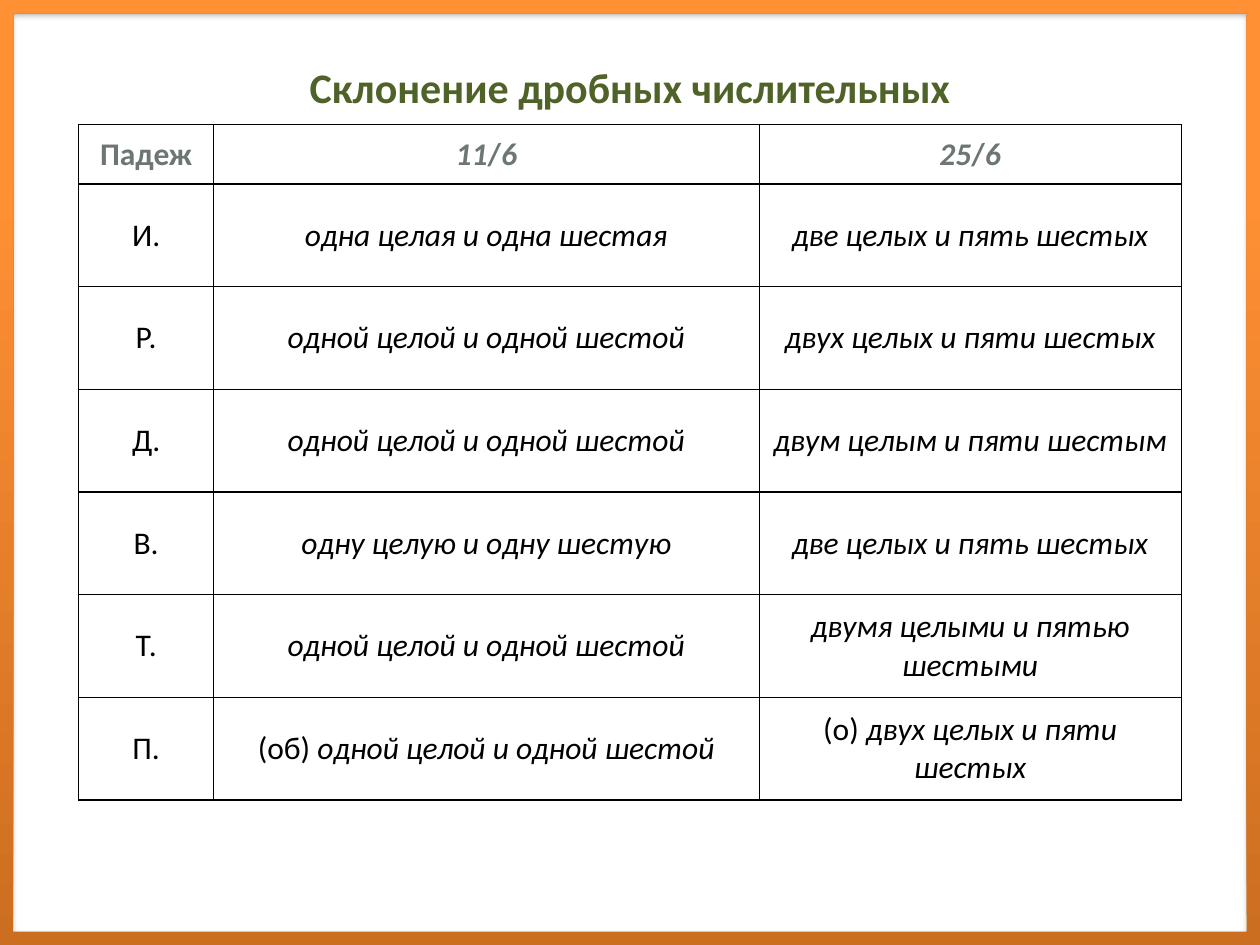
from lxml.etree import SubElement
from pptx import Presentation
from pptx.dml.color import RGBColor
from pptx.enum.shapes import MSO_SHAPE
from pptx.enum.text import MSO_ANCHOR, PP_ALIGN
from pptx.oxml import parse_xml
from pptx.oxml.ns import nsdecls, qn
from pptx.util import Inches, Pt

# Content: each cell is a tuple of text parts
TITLE = "Склонение дробных числительных"
ROWS = [
    [("Падеж",), ("11", "/", "6"), ("25", "/", "6")],
    [("И.",), ("одна целая и одна шестая",), ("две целых и пять шестых",)],
    [("Р.",), ("одной целой и одной шестой",), ("двух целых и пяти шестых",)],
    [("Д.",), ("одной целой и одной шестой",), ("двум целым и пяти шестым",)],
    [("В.",), ("одну целую и одну шестую",), ("две целых и пять шестых",)],
    [("Т.",), ("одной целой и одной шестой",), ("двумя целыми и пятью шестыми",)],
    [("П.",), ("(об) ", "одной целой и одной шестой"),
     ("(о) ", "двух целых и пяти шестых")],
]
UPRIGHT = {"/", "(об) ", "(о) "}
COLORS = {"title": "4F6228", "header": "6B7770", "text": "000000",
          "cell": "FFFFFF", "border": "000000", "shadow": "000000"}
FRAME_STOPS = [(0, "CC6E20"), (80, "FF9034"), (100, "FF9136")]
FONT = "Calibri"

# Layout in inches
WIDTH, HEIGHT = 10, 7.5
COLUMNS = [1.07, 4.33, 3.35]
HEADER_HEIGHT, ROW_HEIGHT = 0.47, 0.815
TABLE_LEFT, TABLE_TOP = (WIDTH - sum(COLUMNS)) / 2, 0.99


def style(paragraph, size, color, bold):
    paragraph.alignment = PP_ALIGN.CENTER
    font = paragraph.font
    font.name, font.size, font.bold = FONT, Pt(size), bold
    font.color.rgb = RGBColor.from_string(COLORS[color])


def add_borders(cell):
    properties = cell._tc.get_or_add_tcPr()
    for index, side in enumerate(("lnL", "lnR", "lnT", "lnB")):
        line = parse_xml(f'<a:{side} {nsdecls("a")} w="{Pt(0.75)}"/>')
        fill = SubElement(line, qn("a:solidFill"))
        SubElement(fill, qn("a:srgbClr"), val=COLORS["border"])
        properties.insert(index, line)


def add_frame(slide):
    frame = slide.shapes.add_shape(
        MSO_SHAPE.FRAME, 0, 0, Inches(WIDTH), Inches(HEIGHT))
    frame.adjustments[0] = 0.014
    frame.line.fill.background()
    stops = "".join(
        f'<a:gs pos="{share * 1000}"><a:srgbClr val="{color}"/></a:gs>'
        for share, color in FRAME_STOPS)
    properties = frame._element.spPr
    properties.find(qn("a:prstGeom")).addnext(parse_xml(
        f'<a:gradFill {nsdecls("a")}><a:gsLst>{stops}</a:gsLst>'
        f'<a:lin ang="{270 * 60000}" scaled="0"/></a:gradFill>'))
    properties.append(parse_xml(
        f'<a:effectLst {nsdecls("a")}><a:outerShdw blurRad="{Pt(3.1)}" '
        f'dist="{Pt(1.8)}" dir="{90 * 60000}" rotWithShape="0">'
        f'<a:srgbClr val="{COLORS["shadow"]}"><a:alpha val="35000"/>'
        '</a:srgbClr></a:outerShdw></a:effectLst>'))
    # Send the frame behind the title
    slide.shapes._spTree.insert(2, frame._element)


def add_title(slide):
    title = slide.shapes.title
    title.left, title.top = Inches(0.5), Inches(0.3)
    title.width, title.height = Inches(WIDTH - 1), Inches(0.77)
    title.text_frame.text = TITLE
    title.text_frame.vertical_anchor = MSO_ANCHOR.MIDDLE
    style(title.text_frame.paragraphs[0], 24, "title", True)


def add_declension_table(slide):
    heights = [HEADER_HEIGHT] + [ROW_HEIGHT] * (len(ROWS) - 1)
    table = slide.shapes.add_table(
        len(ROWS), len(COLUMNS), Inches(TABLE_LEFT), Inches(TABLE_TOP),
        Inches(sum(COLUMNS)), Inches(sum(heights))).table
    for column, width in zip(table.columns, COLUMNS):
        column.width = Inches(width)
    for row, height in zip(table.rows, heights):
        row.height = Inches(height)

    for r, row in enumerate(ROWS):
        for c, parts in enumerate(row):
            cell = table.cell(r, c)
            cell.vertical_anchor = MSO_ANCHOR.MIDDLE
            cell.fill.solid()
            cell.fill.fore_color.rgb = RGBColor.from_string(COLORS["cell"])
            add_borders(cell)
            paragraph = cell.text_frame.paragraphs[0]
            style(paragraph, 18, "text" if r else "header", r == 0)
            for part in parts:
                run = paragraph.add_run()
                run.text = part
                run.font.italic = c > 0 and part not in UPRIGHT


def main():
    deck = Presentation()
    deck.slide_width, deck.slide_height = Inches(WIDTH), Inches(HEIGHT)
    slide = deck.slides.add_slide(deck.slide_layouts[5])
    add_frame(slide)
    add_title(slide)
    add_declension_table(slide)
    deck.save("out.pptx")


if __name__ == "__main__":
    main()
